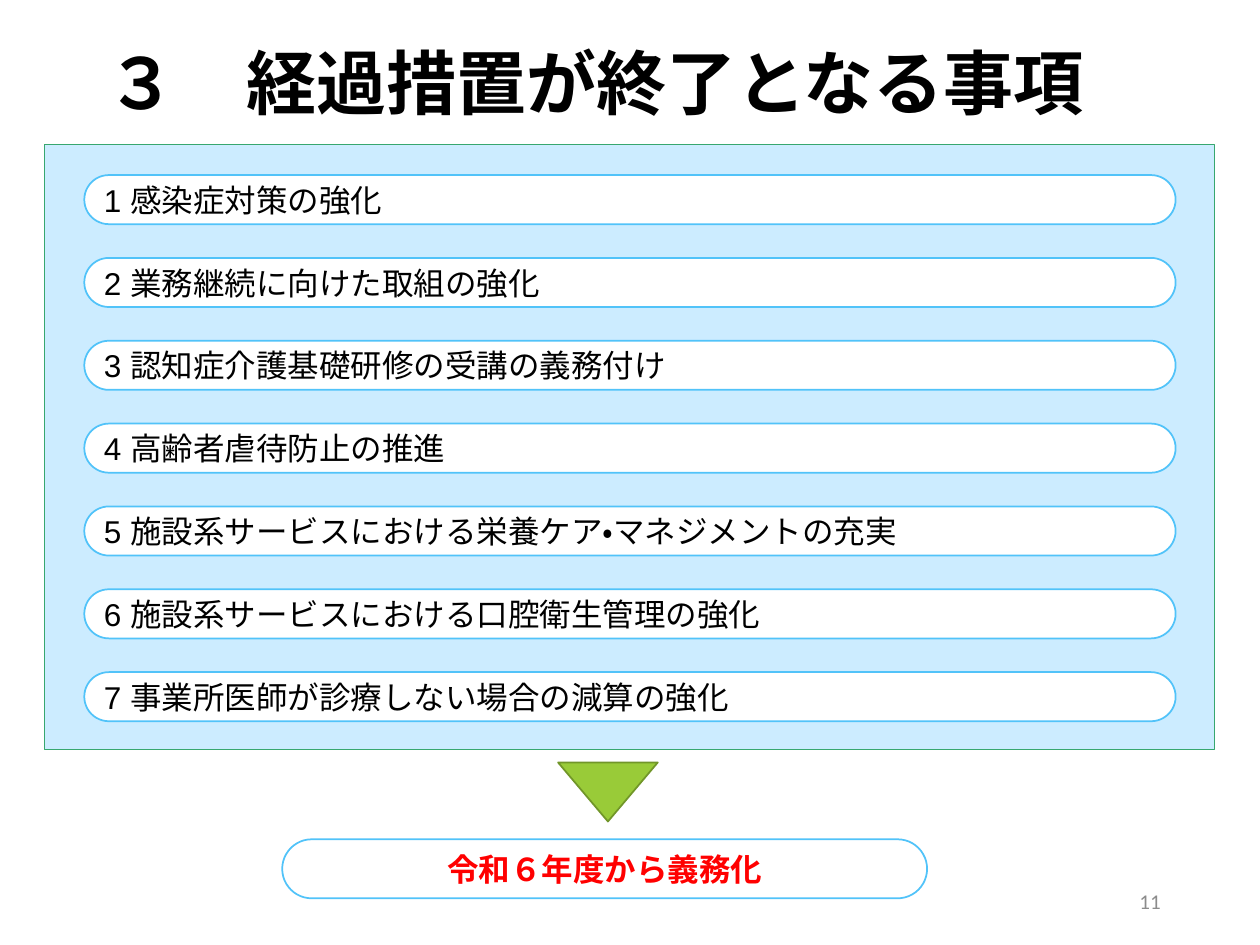
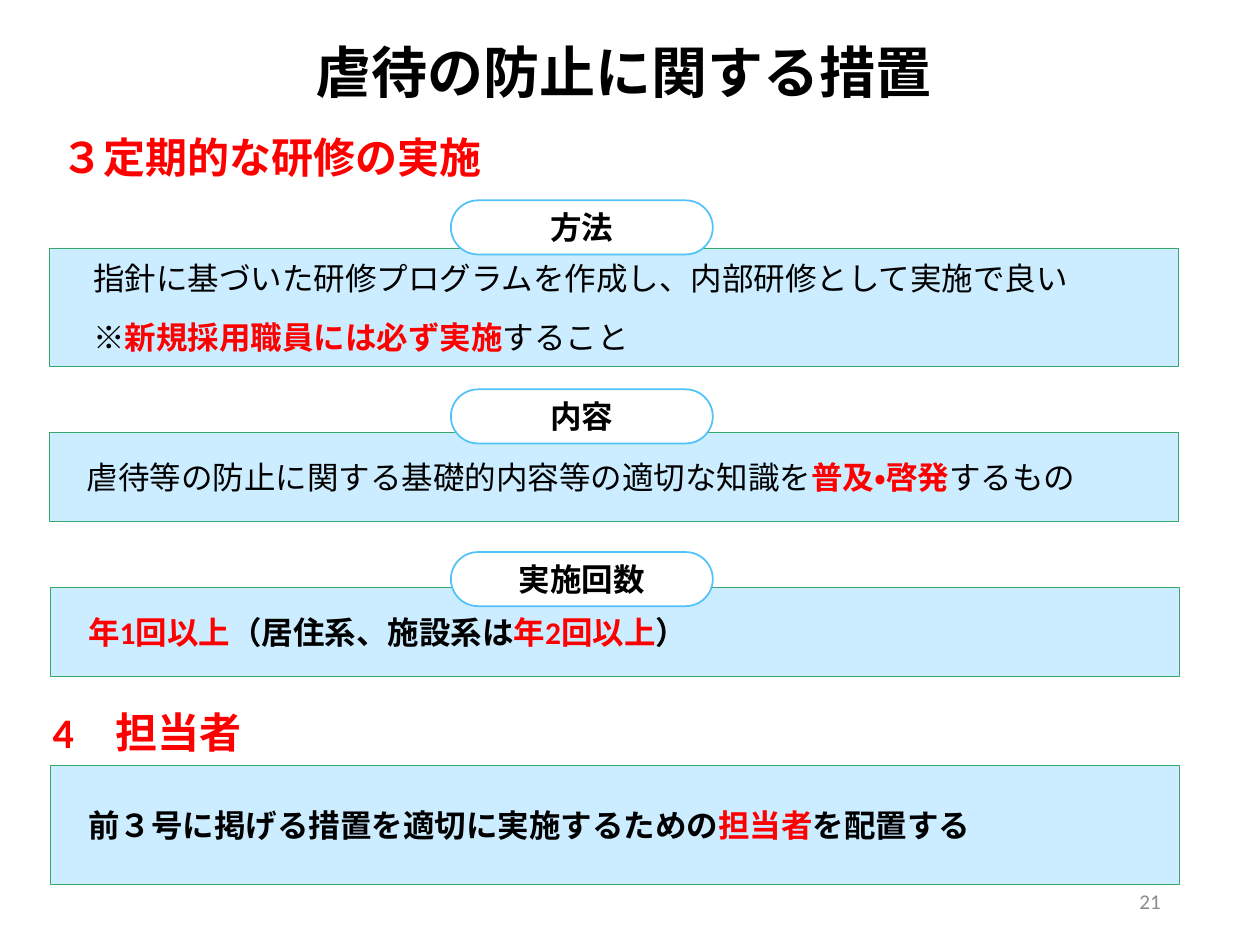
"""Build two slides on care-service measures that become mandatory."""
from pptx import Presentation
from pptx.dml.color import RGBColor
from pptx.enum.lang import MSO_LANGUAGE_ID
from pptx.enum.shapes import MSO_SHAPE
from pptx.enum.text import MSO_ANCHOR, MSO_AUTO_SIZE, PP_ALIGN
from pptx.util import Cm, Pt

COLORS = {
    "text": "000000",
    "accent": "FF0000",
    "number": "8C8C8C",
    "panel": "CCECFF",
    "panel_line": "37A76F",
    "pill": "FFFFFF",
    "pill_line": "51C3F9",
    "arrow": "99CB38",
    "arrow_line": "719629",
}
PILL_W, PILL_H, PILL_X = 5.28, 1.09, 9.09
PANEL_W = 22.76

ITEMS = [
    "1 感染症対策の強化",
    "2 業務継続に向けた取組の強化",
    "3 認知症介護基礎研修の受講の義務付け",
    "4 高齢者虐待防止の推進",
    "5 施設系サービスにおける栄養ケア・マネジメントの充実",
    "6 施設系サービスにおける口腔衛生管理の強化",
    "7 事業所医師が診療しない場合の減算の強化",
]
METHOD = [
    [("指針に基づいた研修プログラムを作成し、内部研修として実施で良い", "text", False)],
    [("※", "text", False), ("新規採用職員には必ず実施", "accent", True), ("すること", "text", False)],
]
CONTENT = [[
    ("虐待等の防止に関する基礎的内容等の適切な知識を", "text", False),
    ("普及・啓発", "accent", True),
    ("するもの", "text", False),
]]
FREQUENCY = [[
    ("年1回以上", "accent", True),
    ("（居住系、施設系は", "text", True),
    ("年2回以上", "accent", True),
    ("）", "text", True),
]]
MANAGER = [[
    ("前３号に掲げる措置を適切に実施するための", "text", True),
    ("担当者", "accent", True),
    ("を配置する", "text", True),
]]


def rgb(name):
    return RGBColor.from_string(COLORS[name])


def add_run(p, text, size, color="text", bold=False, font="Calibri"):
    r = p.add_run()
    r.text = text
    r.font.size = Pt(size)
    r.font.name = font
    r.font.bold = bold
    r.font.color.rgb = rgb(color)
    r.font.language_id = MSO_LANGUAGE_ID.JAPANESE


def prepare_text(sp, align=PP_ALIGN.LEFT):
    tf = sp.text_frame
    tf.word_wrap = True
    tf.auto_size = MSO_AUTO_SIZE.NONE
    tf.vertical_anchor = MSO_ANCHOR.MIDDLE
    tf.paragraphs[0].alignment = align
    return tf


def add_box(s, kind, box, style, width):
    sp = s.shapes.add_shape(kind, *map(Cm, box))
    sp.shadow.inherit = False
    sp.fill.solid()
    sp.fill.fore_color.rgb = rgb(style)
    sp.line.color.rgb = rgb(style + "_line")
    sp.line.width = Pt(width)
    return sp


def add_pill(s, box, text, align=PP_ALIGN.CENTER, **run_style):
    sp = add_box(s, MSO_SHAPE.ROUNDED_RECTANGLE, box, "pill", 1)
    sp.adjustments[0] = 0.5
    add_run(prepare_text(sp, align).paragraphs[0], text, 18, **run_style)


def add_panel(s, box, paragraphs=(), indent=0.51):
    sp = add_box(s, MSO_SHAPE.RECTANGLE, box, "panel", 0.5)
    tf = prepare_text(sp)
    for i, runs in enumerate(paragraphs):
        p = tf.add_paragraph() if i else tf.paragraphs[0]
        p.alignment = PP_ALIGN.LEFT
        p.space_before = p.space_after = Pt(6)
        p._p.get_or_add_pPr().set("marL", str(Cm(indent)))
        for text, color, bold in runs:
            add_run(p, text, 18, color, bold)


def set_title(s, box, text, size):
    sp = s.shapes.title
    sp.left, sp.top, sp.width, sp.height = map(Cm, box)
    p = prepare_text(sp).paragraphs[0]
    p.line_spacing = 0.9
    add_run(p, text, size, bold=True)


def add_heading(s, left, top, text):
    sp = s.shapes.add_textbox(Cm(left), Cm(top), Cm(22.6), Cm(1.19))
    p = prepare_text(sp).paragraphs[0]
    p.line_spacing = 0.9
    add_run(p, text, 24, "accent", True)


def add_page_number(s, number):
    sp = s.shapes.add_textbox(Cm(17.93), Cm(17.65), Cm(5.72), Cm(1.02))
    add_run(prepare_text(sp, PP_ALIGN.RIGHT).paragraphs[0], number, 12, "number")


def add_title_slide(prs, box, title, size, number):
    s = prs.slides.add_slide(prs.slide_layouts[5])
    set_title(s, box, title, size)
    add_page_number(s, number)
    return s


def build_ending_measures(prs):
    s = add_title_slide(prs, (1.9, 0.2, 22.6, 3.1), "３　経過措置が終了となる事項", 40, "11")
    add_panel(s, (0.89, 2.92, 23.6, 12.19))
    for i, item in enumerate(ITEMS):
        add_pill(s, (1.7, 3.53 + 1.67 * i, 22, 0.99), item, PP_ALIGN.LEFT, font="Arial")
    arrow = add_box(s, MSO_SHAPE.ISOSCELES_TRIANGLE, (11.25, 15.37, 2.01, 1.19), "arrow", 1)
    arrow.rotation = 180
    add_pill(s, (5.69, 16.92, 13, 1.19), "令和６年度から義務化", color="accent", bold=True)


def build_abuse_prevention(prs):
    s = add_title_slide(prs, (6.1, 0.64, 13.5, 1.75), "虐待の防止に関する措置", 32, "21")
    add_heading(s, 0.99, 2.62, "３定期的な研修の実施")
    sections = [
        ("方法", 4.04, (0.99, 5, PANEL_W, 2.39), METHOD, 0.64),
        ("内容", 7.85, (0.99, 8.71, PANEL_W, 1.8), CONTENT, 0.51),
        ("実施回数", 11.13, (1.02, 11.84, PANEL_W, 1.8), FREQUENCY, 0.51),
    ]
    for label, pill_top, box, paragraphs, indent in sections:
        add_panel(s, box, paragraphs, indent)
        add_pill(s, (PILL_X, pill_top, PILL_W, PILL_H), label, bold=True)
    add_heading(s, 0.81, 14.22, "4　担当者")
    add_panel(s, (1.02, 15.44, PANEL_W, 2.39), MANAGER)


def main():
    prs = Presentation()
    prs.slide_width, prs.slide_height = Cm(25.4), Cm(19.05)
    build_ending_measures(prs)
    build_abuse_prevention(prs)
    prs.save("out.pptx")


if __name__ == "__main__":
    main()
